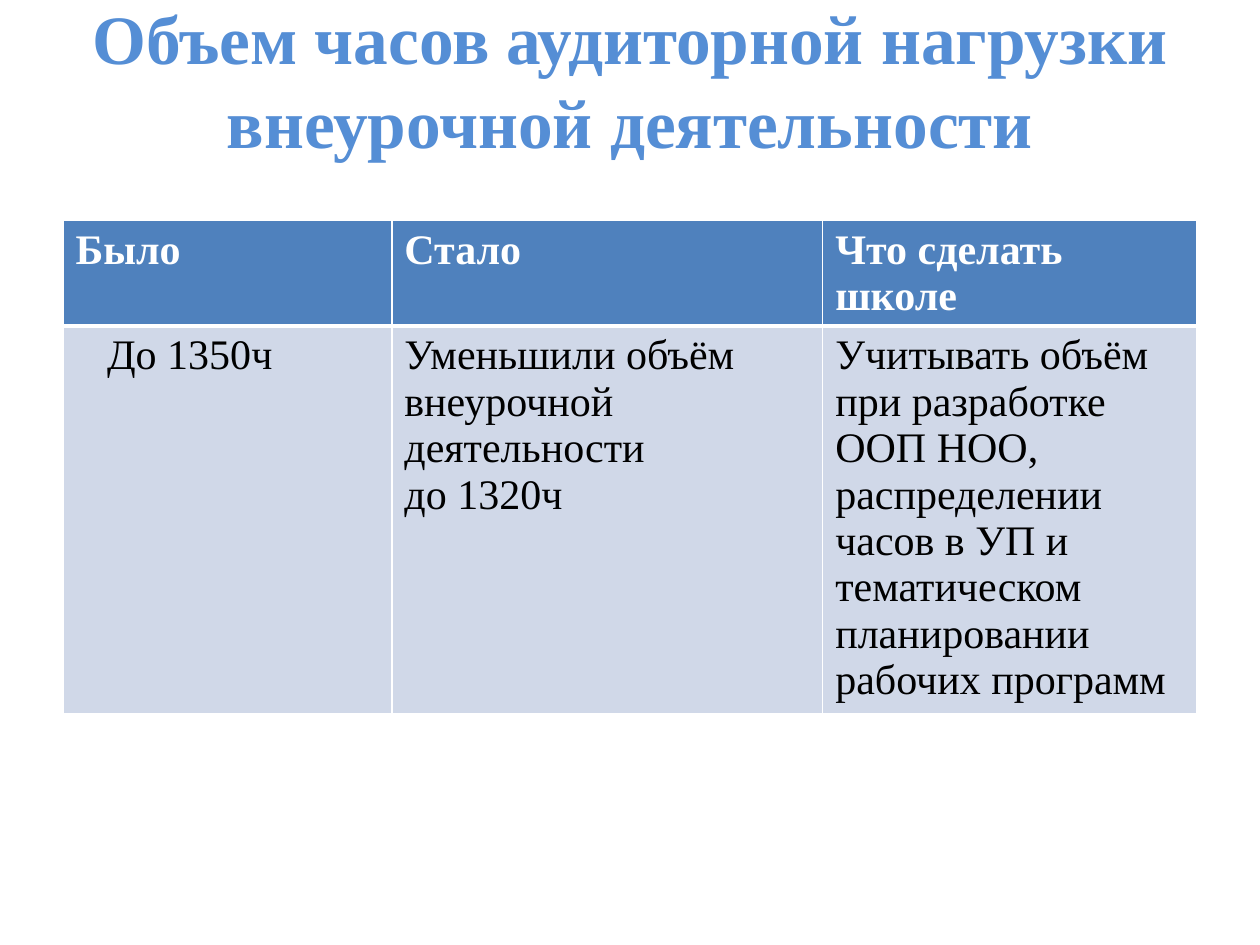
from dataclasses import dataclass

from lxml import etree
from pptx import Presentation
from pptx import util as u
from pptx.dml.color import RGBColor
from pptx.enum import text
from pptx.oxml import ns


@dataclass(frozen=True)
class Theme:
    """Colours, font and type sizes of the slide."""
    font: str = "Times New Roman"
    title: str = "558ED5"
    header: str = "4F81BD"
    body: str = "D0D8E8"
    light: str = "FFFFFF"
    dark: str = "000000"
    title_size: float = 39.6
    table_size: float = 24
    thin: float = 1
    thick: float = 3


def write_text(frame, content, *, font, size, color, bold=False, align=None):
    """Fill a text frame, one paragraph per line of content."""
    frame.word_wrap = True
    for index, line in enumerate(content.split("\n")):
        paragraph = frame.paragraphs[0] if index == 0 else frame.add_paragraph()
        paragraph.alignment = align
        run = paragraph.add_run()
        run.text = line
        run.font.name = font
        run.font.size = u.Pt(size)
        run.font.bold = bold
        run.font.color.rgb = RGBColor.from_string(color)


class SlideBuilder:
    """Places styled elements on a slide by shares of its size."""

    def __init__(self, presentation, theme):
        """Add a title-only slide to the presentation."""
        self.theme = theme
        self.width = presentation.slide_width
        self.height = presentation.slide_height
        self.slide = presentation.slides.add_slide(presentation.slide_layouts[5])

    def box(self, left, top, width, height):
        """Turn shares of the slide into lengths."""
        return (int(left * self.width), int(top * self.height),
                int(width * self.width), int(height * self.height))

    def title(self, content, area, bottom_inset):
        """Move, fill and format the title placeholder."""
        shape = self.slide.shapes.title
        shape.left, shape.top, shape.width, shape.height = self.box(*area)
        frame = shape.text_frame
        frame.vertical_anchor = text.MSO_ANCHOR.MIDDLE
        frame.margin_bottom = u.Inches(bottom_inset)
        write_text(frame, content, font=self.theme.font, size=self.theme.title_size,
                   color=self.theme.title, bold=True, align=text.PP_ALIGN.CENTER)

    def border(self, cell, **widths):
        """Draw the cell's edges in the light colour."""
        properties = cell._tc.get_or_add_tcPr()
        for index, edge in enumerate(("lnL", "lnR", "lnT", "lnB")):
            width = widths.get(edge, self.theme.thin)
            line = etree.Element(ns.qn(f"a:{edge}"), w=str(u.Pt(width)))
            fill = etree.SubElement(line, ns.qn("a:solidFill"))
            etree.SubElement(fill, ns.qn("a:srgbClr"), val=self.theme.light)
            properties.insert(index, line)

    def table(self, rows, area, column_shares, row_shares):
        """Add a table with a coloured header row."""
        theme = self.theme
        left, top, width, height = self.box(*area)
        table = self.slide.shapes.add_table(
            len(rows), len(rows[0]), left, top, width, height).table
        for column, share in zip(table.columns, column_shares):
            column.width = int(width * share)
        for index, (values, share) in enumerate(zip(rows, row_shares)):
            table.rows[index].height = int(height * share)
            header = index == 0
            for cell, value in zip(table.rows[index].cells, values):
                cell.fill.solid()
                cell.fill.fore_color.rgb = RGBColor.from_string(
                    theme.header if header else theme.body)
                self.border(cell, **{"lnB" if header else "lnT": theme.thick})
                write_text(cell.text_frame, value, font=theme.font,
                           size=theme.table_size, bold=header,
                           color=theme.light if header else theme.dark)
        return table


def main():
    """Build and save the slide."""
    presentation = Presentation()
    presentation.slide_width = u.Inches(10)
    presentation.slide_height = u.Inches(7.5)
    builder = SlideBuilder(presentation, Theme())
    builder.title("Объем часов аудиторной нагрузки внеурочной деятельности",
                  (0.05, 0.04, 0.9, 1 / 6), bottom_inset=0.65)
    rows = [
        ("Было", "Стало", "Что сделать школе"),
        ("До 1350ч",
         "Уменьшили объём внеурочной деятельности\nдо 1320ч",
         "Учитывать объём при разработке ООП НОО, распределении часов "
         "в УП и тематическом планировании рабочих программ"),
    ]
    table = builder.table(rows, (0.05, 7 / 30, 0.9, 0.52),
                          (0.29, 0.38, 0.33), (0.21, 0.79))
    table.cell(1, 0).margin_left = u.Inches(0.35)
    presentation.save("out.pptx")


if __name__ == "__main__":
    main()
